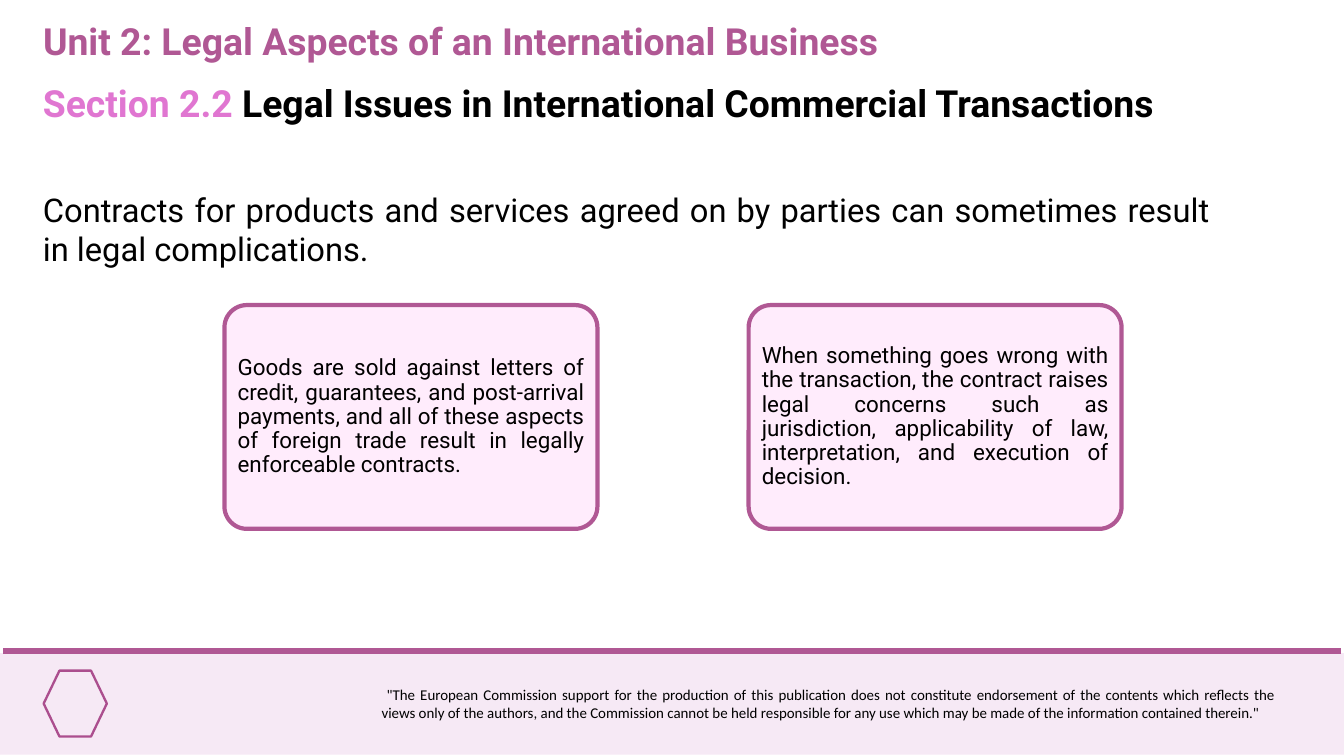
from dataclasses import dataclass

from lxml.etree import SubElement
from pptx import Presentation
from pptx.dml.color import RGBColor
from pptx.enum.shapes import MSO_CONNECTOR, MSO_SHAPE
from pptx.enum.text import MSO_ANCHOR, PP_ALIGN
from pptx.oxml.ns import qn
from pptx.util import Pt


@dataclass(frozen=True)
class Theme:
    plum: RGBColor = RGBColor.from_string("B05894")
    orchid: RGBColor = RGBColor.from_string("E076D1")
    icon: RGBColor = RGBColor.from_string("AB4E8E")
    band: RGBColor = RGBColor.from_string("F6E9F5")
    card: RGBColor = RGBColor.from_string("FFECFC")
    ink: RGBColor = RGBColor.from_string("000000")
    font: str = "Roboto"
    footer_font: str = "Calibri"
    heading: int = 40
    body: int = 35
    card_text: int = 24
    footer: int = 16


theme = Theme()
PX = 9144


def place(left, top, width, height):
    return [length * PX for length in (left, top, width, height)]


def write(shape, runs, size, font=theme.font, bold=False,
          align=PP_ALIGN.LEFT, anchor=MSO_ANCHOR.TOP):
    frame = shape.text_frame
    frame.word_wrap = True
    frame.vertical_anchor = anchor
    paragraph = frame.paragraphs[0]
    paragraph.alignment = align
    for text, color in runs:
        run = paragraph.add_run()
        run.text = text
        run.font.name = font
        run.font.size = Pt(size)
        run.font.bold = bold
        run.font.color.rgb = color
    return paragraph


presentation = Presentation()
presentation.slide_width = 2000 * PX
presentation.slide_height = 1125 * PX
slide = presentation.slides.add_slide(presentation.slide_layouts[5])
shapes = slide.shapes

band = shapes.add_shape(MSO_SHAPE.RECTANGLE, *place(0, 972, 2000, 151))
band.shadow.inherit = False
band.fill.solid()
band.fill.fore_color.rgb = theme.band
band.line.fill.background()

rule = shapes.add_connector(MSO_CONNECTOR.STRAIGHT, 5 * PX, 969 * PX, 1995 * PX, 969 * PX)
rule.line.color.rgb = theme.plum
rule.line.width = Pt(6.75)
SubElement(rule.element.spPr, qn("a:effectLst"))

emblem = shapes.add_shape(MSO_SHAPE.HEXAGON, *place(65, 998, 94, 98))
emblem.shadow.inherit = False
emblem.fill.background()
emblem.line.color.rgb = theme.icon
emblem.line.width = Pt(2.5)

disclaimer = (
    ' "The European Commission support for the production of this publication does not '
    "constitute endorsement of the contents which reflects the views only of the authors, "
    "and the Commission cannot be held responsible for any use which may be made of the "
    'information contained therein."'
)
footer = shapes.add_textbox(*place(558, 1015, 1350, 64))
write(footer, [(disclaimer, theme.ink)], theme.footer, font=theme.footer_font,
      align=PP_ALIGN.JUSTIFY)

introduction = shapes.add_textbox(*place(54, 277, 1758, 355))
write(introduction, [(
    "Contracts for products and services agreed on by parties can sometimes result "
    "in legal complications.", theme.ink)], theme.body, align=PP_ALIGN.JUSTIFY)

section = shapes.add_textbox(*place(54, 114, 1996, 77))
write(section, [
    ("Section 2.2 ", theme.orchid),
    ("Legal Issues in International Commercial Transactions", theme.ink),
], theme.heading, bold=True)

card_texts = [
    "Goods are sold against letters of credit, guarantees, and post-arrival payments, "
    "and all of these aspects of foreign trade result in legally enforceable contracts.",
    "When something goes wrong with the transaction, the contract raises legal concerns "
    "such as jurisdiction, applicability of law, interpretation, and execution of decision.",
]
for index, text in enumerate(card_texts):
    card = shapes.add_shape(MSO_SHAPE.ROUNDED_RECTANGLE, *place(334 + index * 780, 454, 555, 333))
    card.adjustments[0] = 0.1
    card.shadow.inherit = False
    card.fill.solid()
    card.fill.fore_color.rgb = theme.card
    card.line.color.rgb = theme.plum
    card.line.width = Pt(4.5)
    paragraph = write(card, [(text, theme.ink)], theme.card_text,
                      align=PP_ALIGN.JUSTIFY, anchor=MSO_ANCHOR.MIDDLE)
    paragraph.line_spacing = 0.9

title = shapes.title
title.left, title.top, title.width, title.height = place(54, 22, 1562, 77)
write(title, [("Unit 2: Legal Aspects of an International Business", theme.plum)],
      theme.heading, bold=True)

presentation.save("out.pptx")
